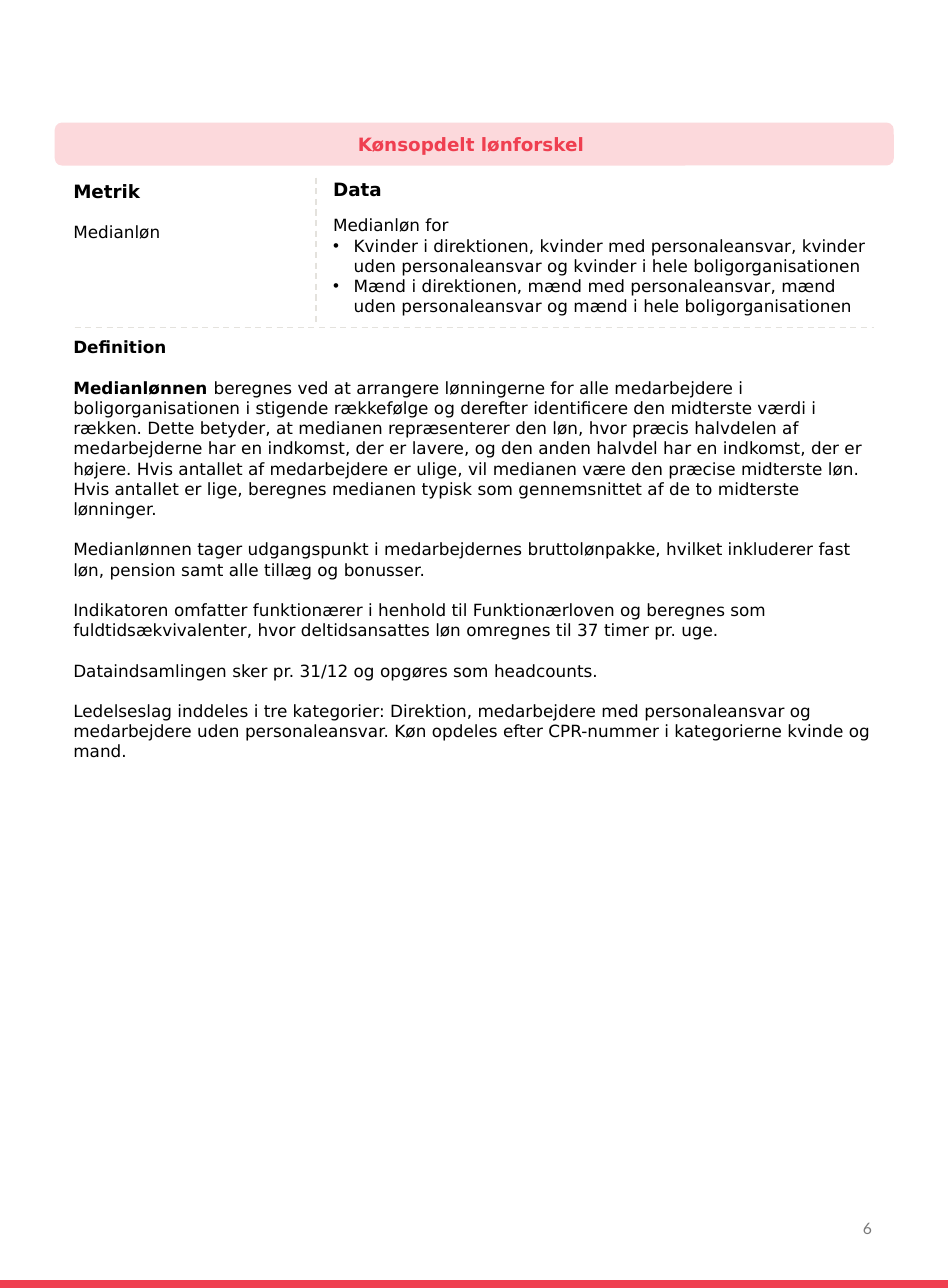
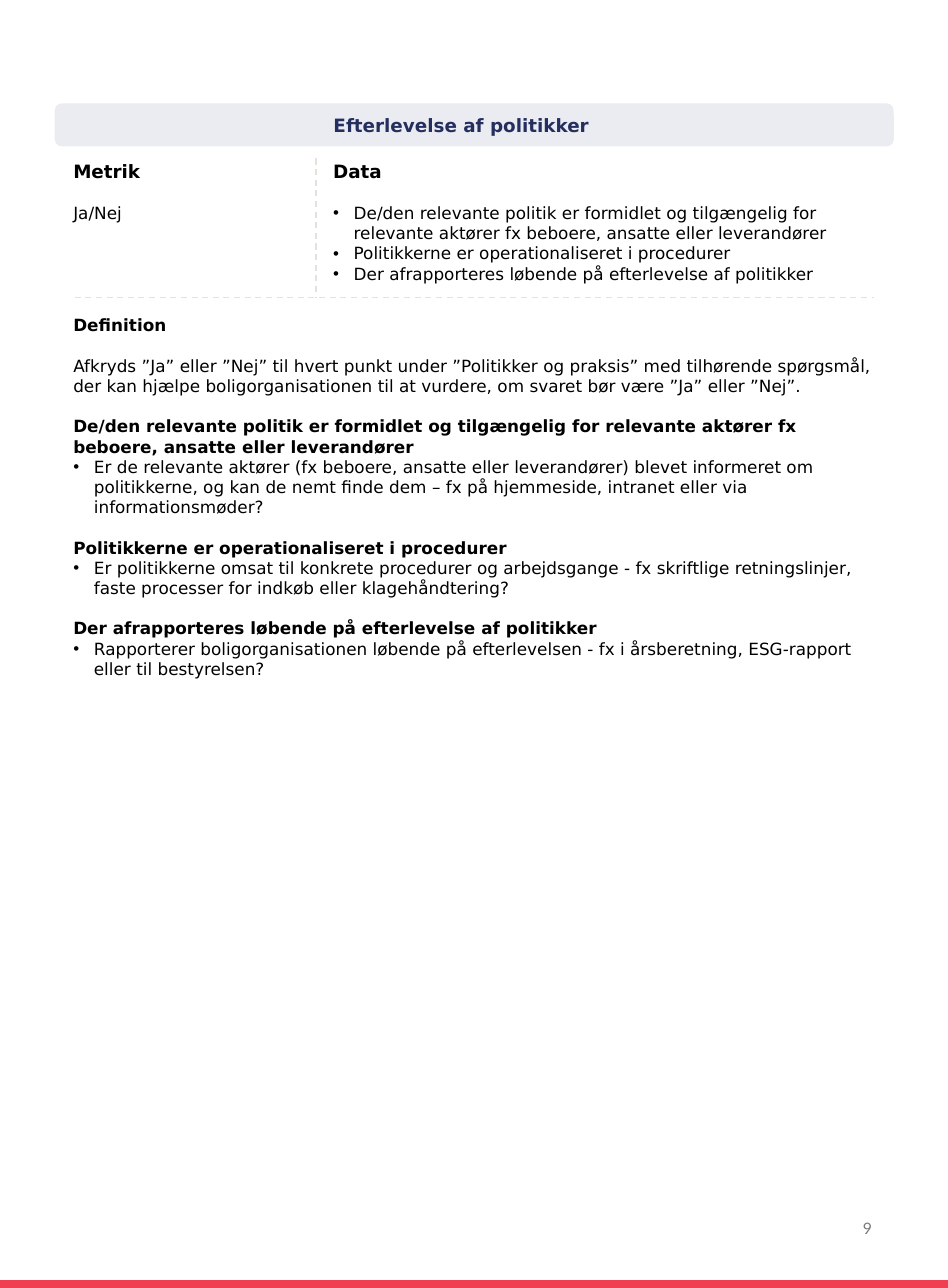
from dataclasses import dataclass

from lxml import etree
from pptx import Presentation
from pptx import util as u
from pptx.dml.color import RGBColor
from pptx.enum import dml, shapes, text
from pptx.oxml import ns

PAGE_WIDTH, PAGE_HEIGHT = 619.6, 841.89
RED = RGBColor(0xEF, 0x3F, 0x50)
PALE_RED = RGBColor(0xFC, 0xD9, 0xDC)
NAVY = RGBColor(0x25, 0x2F, 0x5F)
PALE_NAVY = RGBColor(0xEB, 0xEC, 0xF2)
RULE_GREY = RGBColor(0xE4, 0xE2, 0xDD)
NUMBER_GREY = RGBColor(0x79, 0x79, 0x79)
BLACK = RGBColor(0, 0, 0)

BODY_FONT, NUMBER_FONT = "DejaVu Sans", "Lato"
HEADING_SIZE, BODY_SIZE, NUMBER_SIZE = 12, 11, 10.3
GAP = 13.2
SMALL_GAP = 9.6
BULLET_INDENT = 13.5
INSET = 7.2
BAND_HEIGHT = 5.2
LEFT_COLUMN, RIGHT_COLUMN = 40.8, 210.6
DIVIDER_X, RULE_LEFT, RULE_RIGHT = 206.5, 48.8, 571


@dataclass(frozen=True)
class Span:
    words: str
    bold: bool = False
    size: float = BODY_SIZE
    color: RGBColor = BLACK
    font: str = BODY_FONT


@dataclass(frozen=True)
class Para:
    spans: tuple[Span, ...]
    before: float = 0
    bullet: bool = False
    align: text.PP_ALIGN = text.PP_ALIGN.LEFT


def heading(words: str) -> Para:
    return Para((Span(words, True, HEADING_SIZE),))


def strong(words: str, before: float = GAP) -> Para:
    return Para((Span(words, True),), before)


def plain(words: str, before: float = GAP) -> Para:
    return Para((Span(words),), before)


def bullet(words: str, before: float = 0) -> Para:
    return Para((Span(words),), before, True)


@dataclass(frozen=True)
class Sheet:
    """One indicator; title_shift is extra right inset of the title bar."""
    number: int
    title: str
    title_shift: float
    color: RGBColor
    tint: RGBColor
    top: float
    data_top: float
    divider_bottom: float
    rule_y: float
    definition_top: float
    metric: str
    data: tuple[Para, ...]
    definition: tuple[Para, ...]


SHEETS = (
    Sheet(
        6, "Kønsopdelt lønforskel", 4.2, RED, PALE_RED,
        80.1, 113, 212.4, 214, 216.7,
        "Medianløn",
        (
            plain("Medianløn for", SMALL_GAP),
            bullet("Kvinder i direktionen, kvinder med personaleansvar, kvinder "
                   "uden personaleansvar og kvinder i hele boligorganisationen"),
            bullet("Mænd i direktionen, mænd med personaleansvar, mænd uden "
                   "personaleansvar og mænd i hele boligorganisationen"),
        ),
        (
            Para((
                Span("Medianlønnen ", True),
                Span("beregnes ved at arrangere lønningerne for alle medarbejdere i "
                     "boligorganisationen i stigende rækkefølge og derefter "
                     "identificere den midterste værdi i rækken. Dette betyder, at "
                     "medianen repræsenterer den løn, hvor præcis halvdelen af "
                     "medarbejderne har en indkomst, der er lavere, og den anden "
                     "halvdel har en indkomst, der er højere. Hvis antallet af "
                     "medarbejdere er ulige, vil medianen være den præcise midterste "
                     "løn. Hvis antallet er lige, beregnes medianen typisk som "
                     "gennemsnittet af de to midterste lønninger."),
            ), GAP),
            plain("Medianlønnen tager udgangspunkt i medarbejdernes bruttolønpakke, "
                  "hvilket inkluderer fast løn, pension samt alle tillæg og bonusser."),
            plain("Indikatoren omfatter funktionærer i henhold til Funktionærloven og "
                  "beregnes som fuldtidsækvivalenter, hvor deltidsansattes løn "
                  "omregnes til 37 timer pr. uge."),
            plain("Dataindsamlingen sker pr. 31/12 og opgøres som headcounts."),
            plain("Ledelseslag inddeles i tre kategorier: Direktion, medarbejdere med "
                  "personaleansvar og medarbejdere uden personaleansvar. Køn opdeles "
                  "efter CPR-nummer i kategorierne kvinde og mand."),
        ),
    ),
    Sheet(
        9, "Efterlevelse af politikker", 16.8, NAVY, PALE_NAVY,
        67.6, 101.4, 194.6, 194.6, 202.3,
        "Ja/Nej",
        (
            bullet("De/den relevante politik er formidlet og tilgængelig for "
                   "relevante aktører fx beboere, ansatte eller leverandører", GAP),
            bullet("Politikkerne er operationaliseret i procedurer"),
            bullet("Der afrapporteres løbende på efterlevelse af politikker"),
        ),
        (
            plain("Afkryds ”Ja” eller ”Nej” til hvert punkt under ”Politikker og "
                  "praksis” med tilhørende spørgsmål, der kan hjælpe "
                  "boligorganisationen til at vurdere, om svaret bør være ”Ja” eller "
                  "”Nej”."),
            strong("De/den relevante politik er formidlet og tilgængelig for "
                   "relevante aktører fx beboere, ansatte eller leverandører"),
            bullet("Er de relevante aktører (fx beboere, ansatte eller leverandører) "
                   "blevet informeret om politikkerne, og kan de nemt finde dem – fx "
                   "på hjemmeside, intranet eller via informationsmøder?"),
            strong("Politikkerne er operationaliseret i procedurer"),
            bullet("Er politikkerne omsat til konkrete procedurer og arbejdsgange - "
                   "fx skriftlige retningslinjer, faste processer for indkøb eller "
                   "klagehåndtering?"),
            strong("Der afrapporteres løbende på efterlevelse af politikker"),
            bullet("Rapporterer boligorganisationen løbende på efterlevelsen - fx i "
                   "årsberetning, ESG-rapport eller til bestyrelsen?"),
        ),
    ),
)


def add_bullet(para) -> None:
    properties = para._p.get_or_add_pPr()
    properties.set("marL", str(u.Pt(BULLET_INDENT)))
    properties.set("indent", str(-u.Pt(BULLET_INDENT)))
    etree.SubElement(properties, ns.qn("a:buFont")).set("typeface", "Arial")
    etree.SubElement(properties, ns.qn("a:buChar")).set("char", "•")


def write(frame, paras: tuple[Para, ...]) -> None:
    frame.word_wrap = True
    for index, item in enumerate(paras):
        para = frame.add_paragraph() if index else frame.paragraphs[0]
        if item.bullet:
            add_bullet(para)
        para.alignment = item.align
        if item.before:
            para.space_before = u.Pt(item.before)
        for span in item.spans:
            run = para.add_run()
            run.text = span.words
            run.font.name = span.font
            run.font.size = u.Pt(span.size)
            run.font.bold = span.bold
            run.font.color.rgb = span.color


def add_text(page, left: float, top: float, width: float, height: float,
             paras: tuple[Para, ...]):
    box = page.shapes.add_textbox(u.Pt(left), u.Pt(top), u.Pt(width), u.Pt(height))
    write(box.text_frame, paras)
    return box


def add_panel(page, kind, left: float, top: float, width: float, height: float,
              fill: RGBColor):
    panel = page.shapes.add_shape(kind, u.Pt(left), u.Pt(top), u.Pt(width), u.Pt(height))
    panel.shadow.inherit = False
    panel.fill.solid()
    panel.fill.fore_color.rgb = fill
    panel.line.fill.background()
    return panel


def add_dashed_line(page, x1: float, y1: float, x2: float, y2: float) -> None:
    line = page.shapes.add_connector(
        shapes.MSO_CONNECTOR.STRAIGHT, u.Pt(x1), u.Pt(y1), u.Pt(x2), u.Pt(y2))
    line.line.color.rgb = RULE_GREY
    line.line.width = u.Pt(1)
    line.line.dash_style = dml.MSO_LINE.DASH
    etree.SubElement(line._element.spPr, ns.qn("a:effectLst"))


def add_footer(page, number: int) -> None:
    add_panel(page, shapes.MSO_SHAPE.RECTANGLE, 0, PAGE_HEIGHT - BAND_HEIGHT,
              PAGE_WIDTH, BAND_HEIGHT, RED)
    span = Span(str(number), size=NUMBER_SIZE, color=NUMBER_GREY, font=NUMBER_FONT)
    box = add_text(page, 437.4, 780.5, 139.7, 44.6,
                   (Para((span,), align=text.PP_ALIGN.RIGHT),))
    box.text_frame.vertical_anchor = text.MSO_ANCHOR.MIDDLE


def add_title(page, sheet: Sheet) -> None:
    bar = add_panel(page, shapes.MSO_SHAPE.ROUNDED_RECTANGLE,
                    35.8, sheet.top, 548.4, 28.1, sheet.tint)
    span = Span(sheet.title, True, HEADING_SIZE, sheet.color)
    write(bar.text_frame, (Para((span,), align=text.PP_ALIGN.CENTER),))
    bar.text_frame.margin_right = u.Pt(INSET + sheet.title_shift)
    bar.text_frame.vertical_anchor = text.MSO_ANCHOR.MIDDLE


def draw_sheet(page, sheet: Sheet) -> None:
    add_footer(page, sheet.number)
    add_title(page, sheet)
    add_text(page, LEFT_COLUMN, sheet.top + 33.8, 98, 48,
             (heading("Metrik"), plain(sheet.metric)))
    add_text(page, RIGHT_COLUMN, sheet.data_top, 368, sheet.rule_y - sheet.data_top,
             (heading("Data"), *sheet.data))
    add_text(page, LEFT_COLUMN, sheet.definition_top, 536.4, 287,
             (strong("Definition", 0), *sheet.definition))
    add_dashed_line(page, DIVIDER_X, sheet.top + 36, DIVIDER_X, sheet.divider_bottom)
    add_dashed_line(page, RULE_LEFT, sheet.rule_y, RULE_RIGHT, sheet.rule_y)


def main() -> None:
    deck = Presentation()
    deck.slide_width, deck.slide_height = u.Pt(PAGE_WIDTH), u.Pt(PAGE_HEIGHT)
    for sheet in SHEETS:
        draw_sheet(deck.slides.add_slide(deck.slide_layouts[6]), sheet)
    deck.save("out.pptx")


if __name__ == "__main__":
    main()
